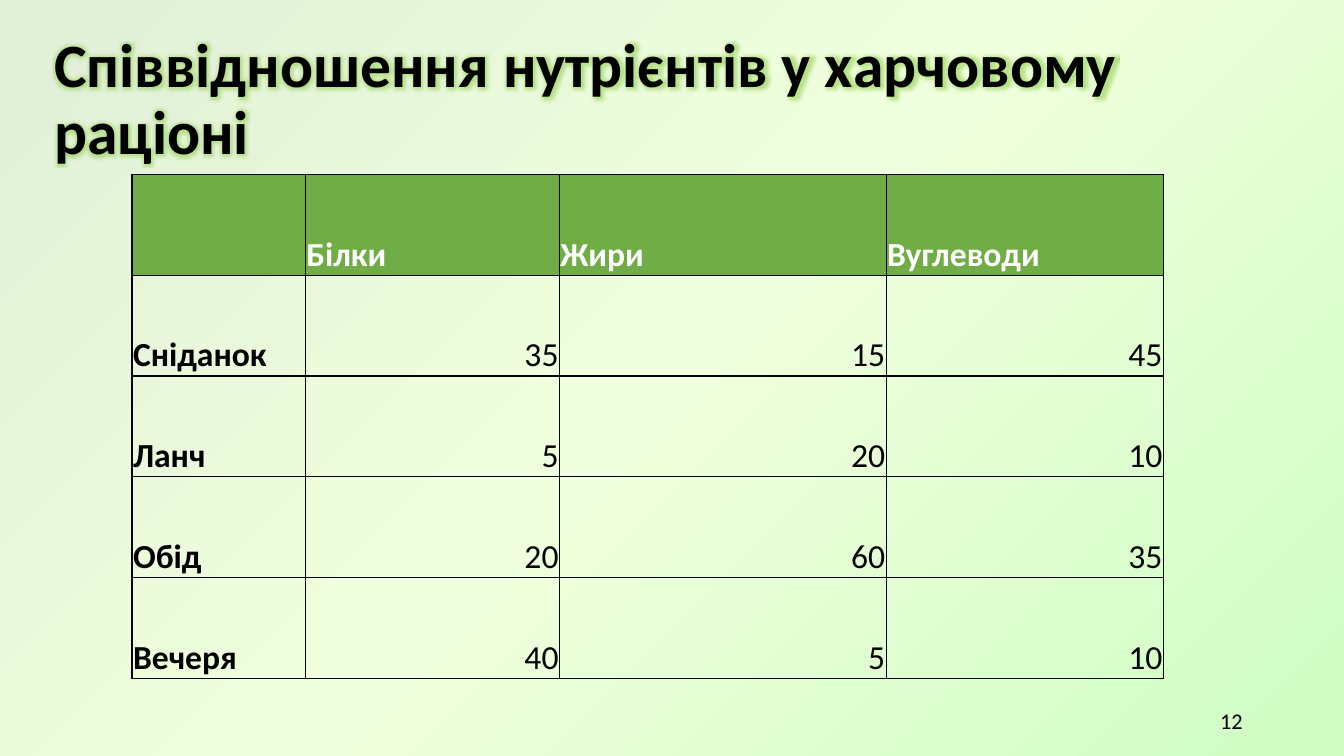
from lxml import etree
from pptx import Presentation, util as u
from pptx.dml.color import RGBColor
from pptx.enum import text
from pptx.oxml import parse_xml
from pptx.oxml.ns import nsdecls, qn

WIDTH, HEIGHT = u.Inches(13.33), u.Inches(7.5)
BACKGROUND = [(3, "E2F0D9"), (49, "F0FFDD"), (100, "CFFDC3")]
COLUMNS = [1.72, 2.52, 3.24, 2.75]
RATIONS = [
    ("", "Білки", "Жири", "Вуглеводи"),
    ("Сніданок", 35, 15, 45),
    ("Ланч", 5, 20, 10),
    ("Обід", 20, 60, 35),
    ("Вечеря", 40, 5, 10),
]


def color(value):
    return RGBColor.from_string(value)


def style(paragraph, size, ink="000000", bold=False, align=text.PP_ALIGN.LEFT):
    paragraph.alignment = align
    font = paragraph.font
    font.name, font.size, font.bold = "Calibri", u.Pt(size), bold
    font.color.rgb = color(ink)


def paint_background(slide):
    fill = slide.background.fill
    fill.gradient()
    gradient = fill._xPr.find(qn("a:gradFill"))
    stops = gradient.find(qn("a:gsLst"))
    stops.clear()
    for share, tint in BACKGROUND:
        stop = etree.SubElement(stops, qn("a:gs"), pos=str(share * 1000))
        etree.SubElement(stop, qn("a:srgbClr"), val=tint)
    gradient.find(qn("a:lin")).set("ang", str(45 * 60000))


def add_text(slide, wording, x, y, width, height, size, **look):
    box = slide.shapes.add_textbox(
        int(WIDTH * x), int(HEIGHT * y), int(WIDTH * width), int(HEIGHT * height))
    frame = box.text_frame
    frame.word_wrap = True
    frame.vertical_anchor = text.MSO_ANCHOR.MIDDLE
    paragraph = frame.paragraphs[0]
    paragraph.text = wording
    style(paragraph, size, **look)
    return paragraph


def add_glow(paragraph, tint, radius):
    properties = paragraph.runs[0].font._element
    properties.append(parse_xml(
        f'<a:effectLst {nsdecls("a")}><a:glow rad="{u.Pt(radius)}">'
        f'<a:srgbClr val="{tint}"><a:alpha val="60000"/></a:srgbClr>'
        '</a:glow></a:effectLst>'))


def add_borders(cell):
    properties = cell._tc.get_or_add_tcPr()
    for side in "LRTB":
        properties.append(parse_xml(
            f'<a:ln{side} {nsdecls("a")} w="{u.Pt(1)}"><a:solidFill>'
            f'<a:srgbClr val="000000"/></a:solidFill></a:ln{side}>'))


def fill_cell(cell, value, is_header):
    add_borders(cell)
    cell.margin_left = cell.margin_right = cell.margin_top = u.Inches(0.01)
    cell.margin_bottom = 0
    cell.vertical_anchor = text.MSO_ANCHOR.BOTTOM
    if is_header:
        cell.fill.solid()
        cell.fill.fore_color.rgb = color("70AD47")
    else:
        cell.fill.background()
    is_number = isinstance(value, int)
    paragraph = cell.text_frame.paragraphs[0]
    if value != "":
        paragraph.text = str(value)
    style(paragraph, 24, "FFFFFF" if is_header else "000000", not is_number,
          text.PP_ALIGN.RIGHT if is_number else text.PP_ALIGN.LEFT)


def add_rations(slide):
    table = slide.shapes.add_table(
        len(RATIONS), len(COLUMNS), u.Inches(1.31), u.Inches(1.73),
        u.Inches(sum(COLUMNS)), u.Inches(len(RATIONS))).table
    for column, width in zip(table.columns, COLUMNS):
        column.width = u.Inches(width)
    for row, meal in enumerate(RATIONS):
        for column, value in enumerate(meal):
            fill_cell(table.cell(row, column), value, row == 0)


def main():
    deck = Presentation()
    deck.slide_width, deck.slide_height = WIDTH, HEIGHT
    slide = deck.slides.add_slide(deck.slide_layouts[6])
    paint_background(slide)
    title = add_text(slide, "Співвідношення нутрієнтів у харчовому раціоні",
                     0.033, 0.037, 0.933, 0.193, 44, bold=True)
    title.line_spacing = 0.9
    add_glow(title, "92D050", 5)
    add_rations(slide)
    add_text(slide, "12", 0.707, 0.927, 0.225, 0.053, 16, align=text.PP_ALIGN.RIGHT)
    deck.save("out.pptx")


if __name__ == "__main__":
    main()
